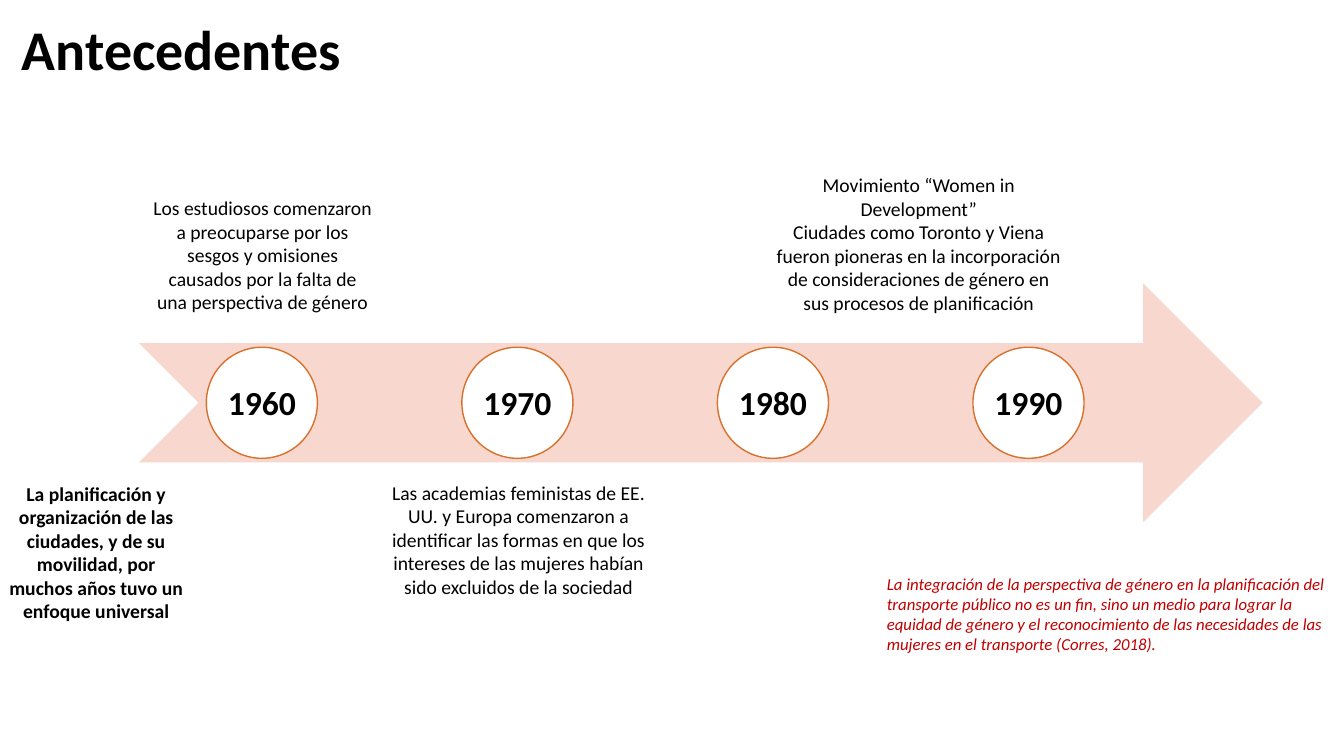
from pptx import Presentation
from pptx import util as u
from pptx.dml import color
from pptx.enum import shapes, text

LEFT, MID = text.PP_ALIGN.LEFT, text.PP_ALIGN.CENTER


def tint(code):
    return color.RGBColor.from_string(code)


def write(frame, *lines, size=14, ink="000000", bold=False, slant=False,
          align=MID, space=1.0):
    frame.word_wrap = True
    for i, line in enumerate(lines):
        para = frame.paragraphs[0] if i == 0 else frame.add_paragraph()
        para.alignment = align
        para.line_spacing = space
        run = para.add_run()
        run.text = line
        font = run.font
        font.name, font.size = "Calibri", u.Pt(size)
        font.bold, font.italic = bold, slant
        font.color.rgb = tint(ink)


class Page:
    """Holds the style and the current slide of the timeline."""

    band, ring, paper, accent = "F8D7CE", "D7712C", "FFFFFF", "C00000"

    def __init__(self, deck):
        self.slide = deck.slides.add_slide(deck.slide_layouts[5])

    def title(self, words, *box):
        head = self.slide.shapes.title
        head.left, head.top, head.width, head.height = map(u.Cm, box)
        frame = head.text_frame
        frame.auto_size = text.MSO_AUTO_SIZE.NONE
        frame.vertical_anchor = text.MSO_ANCHOR.MIDDLE
        write(frame, words, size=40, bold=True, align=LEFT, space=0.9)

    def shape(self, kind, box, fill, line=None):
        form = self.slide.shapes.add_shape(kind, *map(u.Cm, box))
        form.shadow.inherit = False
        form.fill.solid()
        form.fill.fore_color.rgb = tint(fill)
        if line:
            form.line.color.rgb = tint(line)
            form.line.width = u.Pt(1)
        else:
            form.line.fill.background()

    def label(self, box, *lines, **style):
        area = self.slide.shapes.add_textbox(*map(u.Cm, box))
        write(area.text_frame, *lines, **style)


def main():
    deck = Presentation()
    deck.slide_width, deck.slide_height = u.Cm(33.87), u.Cm(19.05)
    page = Page(deck)
    kinds = shapes.MSO_SHAPE

    page.title("Antecedentes", 0.3, 0.03, 29.21, 2.57)
    page.shape(kinds.NOTCHED_RIGHT_ARROW, (3.5, 7.14, 28.32, 6.02), page.band)

    for i, year in enumerate(range(1960, 2000, 10)):
        left = 5.2 + 6.44 * i
        page.shape(kinds.OVAL, (left, 8.75, 2.8, 2.8), page.paper, page.ring)
        page.label((left + 0.1, 9.5, 2.6, 1.27), str(year), size=24, bold=True)

    page.label((-0.05, 12.01, 4.95, 3.84),
               "La planificación y organización de las ciudades, y de su "
               "movilidad, por muchos años tuvo un enfoque universal",
               bold=True)
    page.label((3.61, 4.82, 6.02, 3.25),
               "Los estudiosos comenzaron a preocuparse por los sesgos y "
               "omisiones causados por la falta de una perspectiva de género")
    page.label((9.45, 11.99, 7.24, 3.25),
               "Las academias feministas de EE. UU. y Europa comenzaron a "
               "identificar las formas en que los intereses de las mujeres "
               "habían sido excluidos de la sociedad")
    page.label((19.28, 4.24, 7.75, 3.84),
               "Movimiento “Women in Development”",
               "Ciudades como Toronto y Viena fueron pioneras en la "
               "incorporación de consideraciones de género en sus procesos "
               "de planificación")
    page.label((22.1, 14.33, 11.63, 2.31),
               "La integración de la perspectiva de género en la "
               "planificación del transporte público no es un fin, sino un "
               "medio para lograr la equidad de género y el reconocimiento "
               "de las necesidades de las mujeres en el transporte "
               "(Corres, 2018).",
               size=12, ink=page.accent, slant=True, align=LEFT)

    deck.save("out.pptx")


if __name__ == "__main__":
    main()
